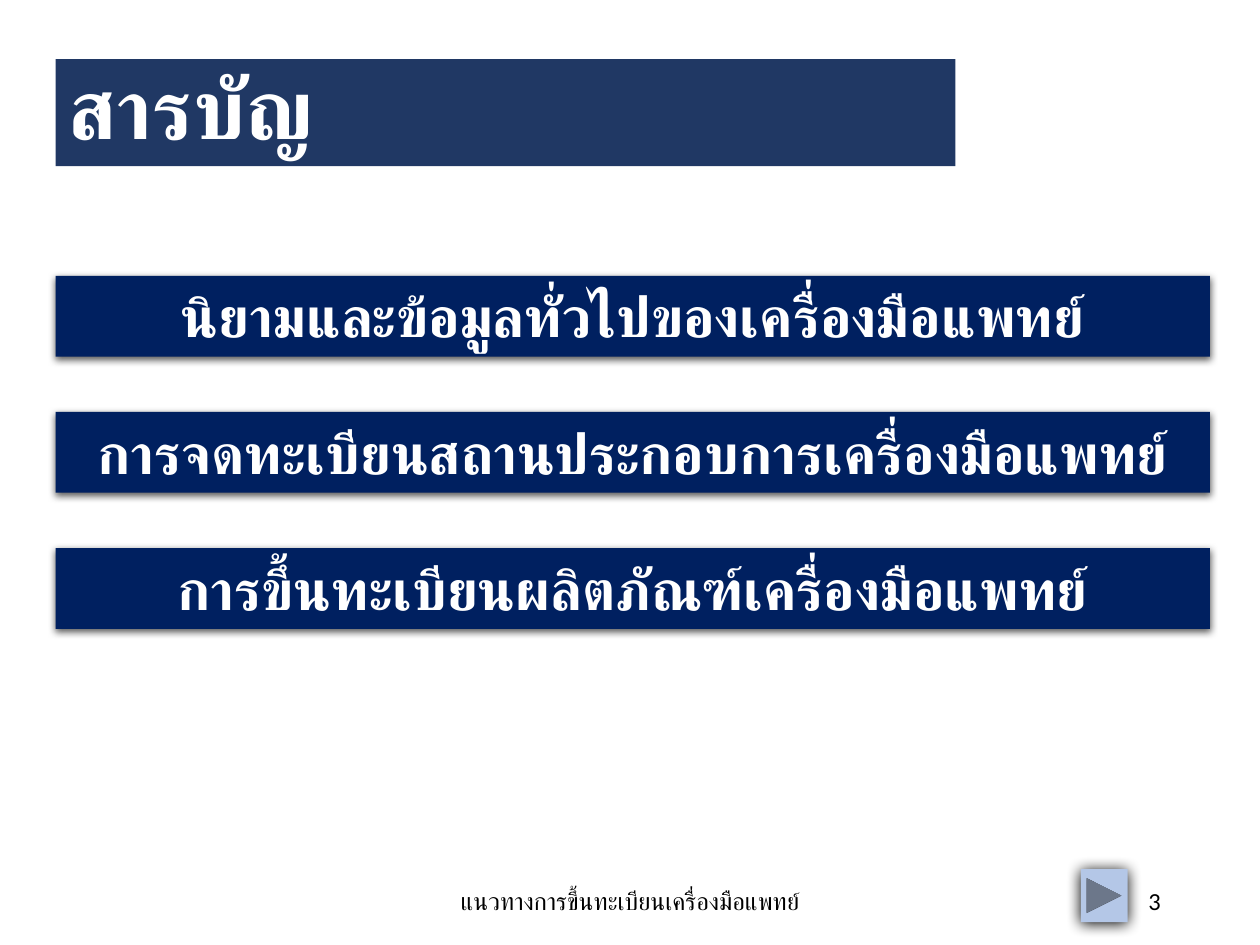
from lxml import etree
from pptx import Presentation
from pptx.dml.color import RGBColor
from pptx.enum.shapes import MSO_SHAPE
from pptx.enum.text import MSO_ANCHOR, MSO_AUTO_SIZE, PP_ALIGN
from pptx.oxml.ns import qn
from pptx.util import Cm, Pt

RECTANGLE = MSO_SHAPE.RECTANGLE
FORWARD_BUTTON = MSO_SHAPE.ACTION_BUTTON_FORWARD_OR_NEXT
LEFT, CENTER, RIGHT = PP_ALIGN.LEFT, PP_ALIGN.CENTER, PP_ALIGN.RIGHT
TOP, MIDDLE = MSO_ANCHOR.TOP, MSO_ANCHOR.MIDDLE
NO_FIT, GROW = MSO_AUTO_SIZE.NONE, MSO_AUTO_SIZE.SHAPE_TO_FIT_TEXT
TITLE_ONLY = 5
TOPICS = [
    "นิยามและข้อมูลทั่วไปของเครื่องมือแพทย์",
    "การจดทะเบียนสถานประกอบการเครื่องมือแพทย์",
    "การขึ้นทะเบียนผลิตภัณฑ์เครื่องมือแพทย์",
]


def color(value):
    """Return the colour for a hex string."""
    return RGBColor.from_string(value)


def write_text(shape, text, size=14, font="Lato", text_color="000000", bold=False,
               align=LEFT, anchor=MIDDLE, fit=NO_FIT, line_spacing=1.0):
    """Write one formatted paragraph into a shape."""
    frame = shape.text_frame
    frame.word_wrap = True
    frame.auto_size = fit
    frame.vertical_anchor = anchor
    paragraph = frame.paragraphs[0]
    paragraph.alignment = align
    paragraph.line_spacing = line_spacing
    run = paragraph.add_run()
    run.text = text
    run.font.size = Pt(size)
    run.font.bold = bold
    run.font.name = font
    run.font.color.rgb = color(text_color)
    properties = run.font._element
    etree.SubElement(properties, qn("a:cs"), typeface=font)


def add_shadow(shape, blur, distance, opacity):
    """Give a shape a black shadow that falls straight down."""
    shape.shadow.inherit = False
    effects = shape._element.spPr.find(qn("a:effectLst"))
    shadow = etree.SubElement(effects, qn("a:outerShdw"), blurRad=str(Pt(blur)),
                              dist=str(Pt(distance)), dir="5400000", rotWithShape="0")
    shade = etree.SubElement(shadow, qn("a:srgbClr"), val="000000")
    etree.SubElement(shade, qn("a:alpha"), val=str(opacity * 1000))


def add_filled_shape(slide, kind, box, fill):
    """Add a borderless filled shape in a box given in centimetres."""
    shape = slide.shapes.add_shape(kind, *map(Cm, box))
    shape.fill.solid()
    shape.fill.fore_color.rgb = color(fill)
    shape.line.fill.background()
    return shape


def place_title(slide, text, box):
    """Place and format the title placeholder as a dark band."""
    title = slide.shapes.title
    title.left, title.top, title.width, title.height = map(Cm, box)
    title.fill.solid()
    title.fill.fore_color.rgb = color("203864")
    write_text(title, text, size=48, text_color="FFFFFF", bold=True, line_spacing=0.9)


def add_topics(slide, topics, box, bar_height):
    """Spread the topic bars evenly over the height of the box."""
    left, top, width, height = box
    pitch = (height - bar_height) / (len(topics) - 1)
    for index, topic in enumerate(topics):
        bar = add_filled_shape(slide, RECTANGLE,
                               (left, top + index * pitch, width, bar_height), "002060")
        add_shadow(bar, blur=4.5, distance=1.5, opacity=63)
        write_text(bar, topic, size=32, text_color="FFFFFF", bold=True,
                   align=CENTER, anchor=TOP, fit=GROW)


def add_footer(slide, text, number, box):
    """Add the centred footer, the page number and the forward button."""
    left, top, width, height = box
    footer = slide.shapes.add_textbox(Cm(left), Cm(top), Cm(8.58), Cm(height))
    write_text(footer, text, align=CENTER)
    number_width = 5.72
    page = slide.shapes.add_textbox(Cm(left + width - number_width), Cm(top),
                                    Cm(number_width), Cm(height))
    write_text(page, number, font="Calibri", align=RIGHT)
    button = add_filled_shape(slide, FORWARD_BUTTON,
                              (left + 13.38, top - 0.13, 0.94, 1.07), "B4C7E7")
    add_shadow(button, blur=8.5, distance=1, opacity=100)


def main():
    """Build the contents slide and save it."""
    presentation = Presentation()
    presentation.slide_width, presentation.slide_height = Cm(25.4), Cm(19.05)
    slide = presentation.slides.add_slide(presentation.slide_layouts[TITLE_ONLY])
    place_title(slide, "สารบัญ", (1.12, 1.19, 18.14, 2.16))
    add_topics(slide, TOPICS, (1.12, 5.56, 23.27, 7.12), bar_height=1.63)
    add_footer(slide, "แนวทางการขึ้นทะเบียนเครื่องมือแพทย์", "3", (8.41, 17.65, 15.24, 1.02))
    presentation.save("out.pptx")


if __name__ == "__main__":
    main()
